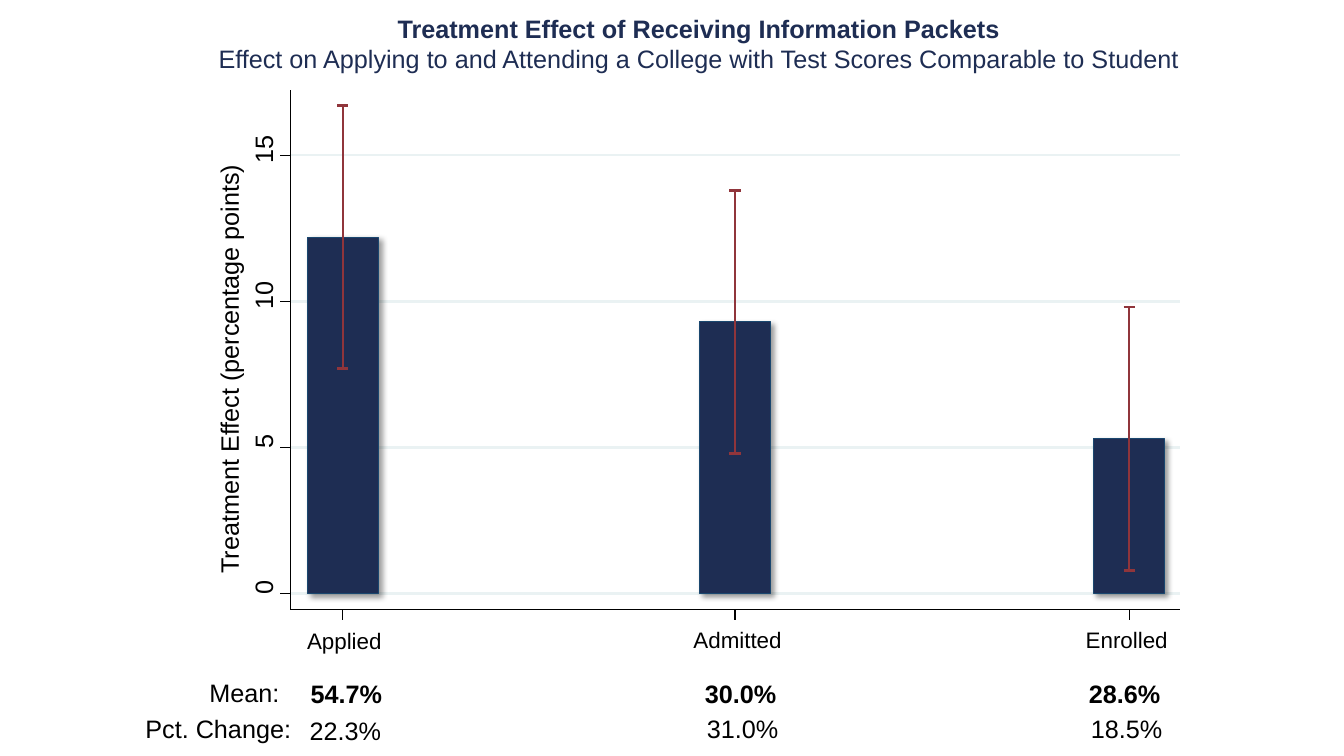
from lxml import etree
from pptx import Presentation
from pptx import util as u
from pptx.dml.color import RGBColor
from pptx.enum import shapes, text
from pptx.oxml import parse_xml
from pptx.oxml.ns import qn

NAVY, MAROON, GRID, BLACK = "1E2D53", "90353B", "EAF2F3", "000000"
LEFT, RIGHT, TOP, BOTTOM = 2.88, 11.7, 0.89, 6.05
ZERO, UNIT = 5.89, 0.29
BAR_W, CAP, TICK = 0.7, 0.055, 0.1
MARGIN = 4.5
SHADOW = (
    '<a:effectLst xmlns:a="http://schemas.openxmlformats.org/drawingml/2006/main">'
    '<a:outerShdw blurRad="50800" dist="38100" dir="2700000" algn="tl" rotWithShape="0">'
    '<a:srgbClr val="000000"><a:alpha val="40000"/></a:srgbClr>'
    '</a:outerShdw></a:effectLst>'
)

prs = Presentation()
prs.slide_width, prs.slide_height = u.Inches(13.33), u.Inches(7.5)
s = prs.slides.add_slide(prs.slide_layouts[6])


def line(x1, y1, x2, y2, color, width):
    cx = s.shapes.add_connector(shapes.MSO_CONNECTOR.STRAIGHT,
                                u.Inches(x1), u.Inches(y1), u.Inches(x2), u.Inches(y2))
    cx.line.color.rgb = RGBColor.from_string(color)
    cx.line.width = u.Pt(width)
    etree.SubElement(cx._element.spPr, qn("a:effectLst"))


def label(x, y, w, h, lines, size=18, color=BLACK, center=False, wrap=False, rot=0, inset=(0, 0)):
    sp = s.shapes.add_textbox(u.Inches(x), u.Inches(y), u.Inches(w), u.Inches(h))
    sp.rotation = rot
    tf = sp.text_frame
    tf.word_wrap = wrap
    tf.auto_size = text.MSO_AUTO_SIZE.SHAPE_TO_FIT_TEXT
    tf.margin_left = tf.margin_right = u.Inches(inset[0])
    tf.margin_top = tf.margin_bottom = u.Inches(inset[1])
    for i, (words, bold) in enumerate(lines):
        p = tf.add_paragraph() if i else tf.paragraphs[0]
        p.alignment = text.PP_ALIGN.CENTER if center else text.PP_ALIGN.LEFT
        r = p.add_run()
        r.text = words
        r.font.name, r.font.size, r.font.bold = "Arial", u.Pt(size), bold
        r.font.color.rgb = RGBColor.from_string(color)


ticks = [(value, ZERO - value * UNIT) for value in (0, 5, 10, 15)]
for value, y in ticks:
    line(LEFT, y, RIGHT, y, GRID, 1.75)

outcomes = [
    ("Applied", 3.4, 12.2, (2.84, 6.22), ("54.7%", 3.08, 6.73), ("22.3%", 3.07, 7.1)),
    ("Admitted", 7.29, 9.3, (6.74, 6.21), ("30.0%", 6.99, 6.73), ("31.0%", 7.01, 7.08)),
    ("Enrolled", 11.2, 5.3, (10.6, 6.21), ("28.6%", 10.8, 6.73), ("18.5%", 10.82, 7.08)),
]
for name, x, effect, name_at, mean, change in outcomes:
    sp = s.shapes.add_shape(shapes.MSO_SHAPE.RECTANGLE,
                            u.Inches(x - BAR_W / 2), u.Inches(ZERO - effect * UNIT),
                            u.Inches(BAR_W), u.Inches(effect * UNIT))
    sp.fill.solid()
    sp.fill.fore_color.rgb = RGBColor.from_string(NAVY)
    sp.line.color.rgb = RGBColor.from_string("1A476F")
    sp.line.width = u.Pt(0)
    sp._element.spPr.append(parse_xml(SHADOW))

    low, high = (ZERO - (effect + d) * UNIT for d in (-MARGIN, MARGIN))
    line(x, high, x, low, MAROON, 1.75)
    for y in (low, high):
        line(x - CAP, y, x + CAP, y, MAROON, 1.75)

    line(x, BOTTOM, x, BOTTOM + TICK, BLACK, 0.88)
    label(*name_at, 1.15, 0.27, [(name, False)], size=16, center=True, wrap=True)
    for (figure, fx, fy), bold in ((mean, True), (change, False)):
        label(fx, fy, 0.72, 0.3, [(figure, bold)])

line(LEFT, BOTTOM, LEFT, TOP, BLACK, 0.88)
line(LEFT, BOTTOM, RIGHT, BOTTOM, BLACK, 0.88)
for value, y in ticks:
    line(LEFT, y, LEFT - TICK, y, BLACK, 0.88)
    w = 0.14 * len(str(value))
    label(2.61 - w / 2, y - 0.21, w, 0.3, [(str(value), False)], rot=270)

label(0.22, 3.49, 4.1, 0.3, [("Treatment Effect (percentage points)", False)], rot=270)
label(1.83, 6.72, 1.19, 0.3, [("Mean:", False)], center=True, wrap=True)
label(1.42, 7.08, 1.49, 0.3, [("Pct. Change:", False)], center=True, wrap=True)
label(1.93, 0.08, 10, 0.71, [
    ("Treatment Effect of Receiving Information Packets", True),
    ("Effect on Applying to and Attending a College with Test Scores Comparable to Student", False),
], color=NAVY, center=True, wrap=True, inset=(0.1, 0.05))

prs.save("out.pptx")
